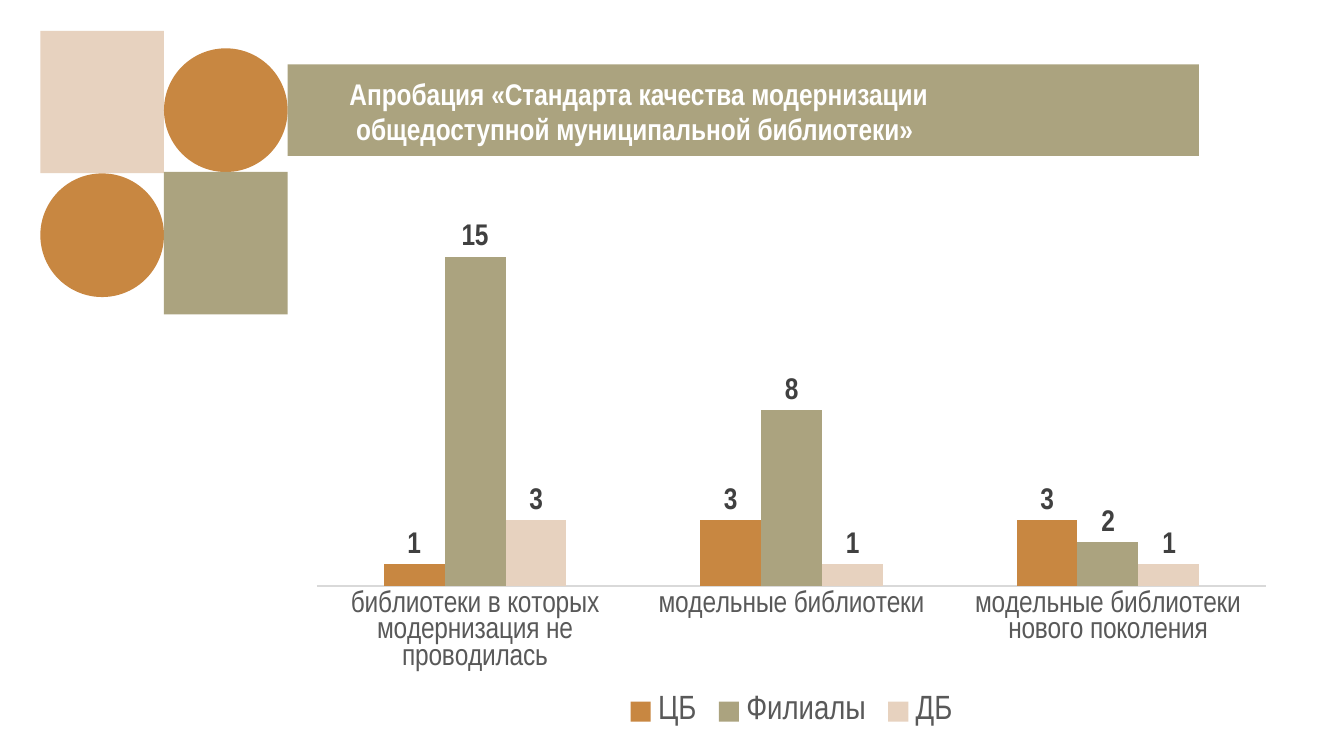
from dataclasses import dataclass

from lxml import etree
from pptx import Presentation
from pptx.chart.data import CategoryChartData
from pptx.dml.color import RGBColor
from pptx.enum.chart import XL_CHART_TYPE, XL_LABEL_POSITION, XL_LEGEND_POSITION, XL_TICK_MARK
from pptx.enum.shapes import MSO_SHAPE
from pptx.enum.text import MSO_ANCHOR, MSO_AUTO_SIZE, PP_ALIGN
from pptx.oxml.ns import qn
from pptx.util import Inches, Pt

RECTANGLE, OVAL = MSO_SHAPE.RECTANGLE, MSO_SHAPE.OVAL
COLUMNS = XL_CHART_TYPE.COLUMN_CLUSTERED
LABEL_ABOVE = XL_LABEL_POSITION.OUTSIDE_END
LEGEND_BELOW = XL_LEGEND_POSITION.BOTTOM
NO_TICKS = XL_TICK_MARK.NONE
LEFT, TOP = PP_ALIGN.LEFT, MSO_ANCHOR.TOP
KEEP_SIZE = MSO_AUTO_SIZE.NONE
TITLE_ONLY = 5


@dataclass(frozen=True)
class Theme:
    font: str = "Arial Narrow"
    orange: str = "C88741"
    olive: str = "ABA37F"
    sand: str = "E7D2BF"
    white: str = "FFFFFF"
    label: str = "404040"
    axis_text: str = "595959"
    axis_line: str = "D9D9D9"
    text_size: int = 16
    legend_size: int = 18


THEME = Theme()
SLIDE_WIDTH = 10
SLIDE_HEIGHT = SLIDE_WIDTH * 9 / 16

# Regions in inches: left, top, width, height
ORNAMENT_BOX = (0.3, 0.23, 1.84, 2.11)
BAND_BOX = (2.14, 0.48, 6.78, 0.68)
CHART_BOX = (2.21, 1.67, 7.36, 3.79)

TITLE_LINES = [
    "Апробация «Стандарта качества модернизации",
    " общедоступной муниципальной библиотеки»",
]
CATEGORIES = [
    "библиотеки в которых модернизация не проводилась",
    "модельные библиотеки",
    "модельные библиотеки нового поколения",
]
SERIES = [
    ("ЦБ", (1, 3, 3), THEME.orange),
    ("Филиалы", (15, 8, 2), THEME.olive),
    ("ДБ", (3, 1, 1), THEME.sand),
]
# Plot area as shares of the chart box
PLOT_LAYOUT = {"x": 0.02, "y": 0.02, "w": 0.96, "h": 0.69}


def format_font(font, size, color, bold=False):
    font.name = THEME.font
    font.size = Pt(size)
    font.bold = bold
    font.color.rgb = RGBColor.from_string(color)


def add_block(slide, kind, box, color):
    shape = slide.shapes.add_shape(kind, *map(Inches, box))
    shape.shadow.inherit = False
    shape.fill.solid()
    shape.fill.fore_color.rgb = RGBColor.from_string(color)
    shape.line.fill.background()


def add_ornament(slide, box):
    """Two by two grid of tiles and circles, each one column wide."""
    left, top, width, height = box
    column, tile = width / 2, 1.06
    middle = left + column
    tile_top = top + height - tile
    add_block(slide, RECTANGLE, (left, top, column, tile), THEME.sand)
    add_block(slide, OVAL, (left, top + tile, column, column), THEME.orange)
    add_block(slide, OVAL, (middle, tile_top - column, column, column), THEME.orange)
    add_block(slide, RECTANGLE, (middle, tile_top, column, tile), THEME.olive)


def add_title_band(slide, box):
    left, top, width, height = box
    add_block(slide, RECTANGLE, box, THEME.olive)

    # Title over the band, indented from its left edge
    title = slide.shapes.title
    indent, drop = 0.36, 0.03
    title.left, title.top = Inches(left + indent), Inches(top + drop)
    title.width, title.height = Inches(width - indent), Inches(height - drop)
    title.element.getparent().append(title.element)
    frame = title.text_frame
    frame.text = "\n".join(TITLE_LINES)
    frame.word_wrap = True
    frame.auto_size = KEEP_SIZE
    frame.vertical_anchor = TOP
    for paragraph in frame.paragraphs:
        paragraph.alignment = LEFT
        for run in paragraph.runs:
            format_font(run.font, THEME.text_size, THEME.white, bold=True)


def set_plot_layout(chart):
    plot_area = chart.element.find(".//" + qn("c:plotArea"))
    layout = plot_area.find(qn("c:layout"))
    if layout is None:
        layout = etree.Element(qn("c:layout"))
        plot_area.insert(0, layout)
    manual = etree.SubElement(layout, qn("c:manualLayout"))
    settings = {"layoutTarget": "inner", "xMode": "edge", "yMode": "edge", **PLOT_LAYOUT}
    for name, value in settings.items():
        etree.SubElement(manual, qn("c:" + name)).set("val", str(value))


def add_library_chart(slide, box):
    data = CategoryChartData()
    data.categories = CATEGORIES
    for name, values, _ in SERIES:
        data.add_series(name, values)
    chart = slide.shapes.add_chart(COLUMNS, *map(Inches, box), data).chart
    chart.has_title = False
    chart.font.name = THEME.font
    set_plot_layout(chart)

    # Columns and value labels
    plot = chart.plots[0]
    plot.gap_width = 219
    plot.overlap = 0
    plot.vary_by_categories = False
    for series, (_, _, color) in zip(plot.series, SERIES):
        series.format.fill.solid()
        series.format.fill.fore_color.rgb = RGBColor.from_string(color)
        labels = series.data_labels
        labels.show_value = True
        labels.position = LABEL_ABOVE
        format_font(labels.font, THEME.text_size, THEME.label, bold=True)

    # Axes
    value_axis = chart.value_axis
    value_axis.visible = False
    value_axis.has_major_gridlines = False
    value_axis.minimum_scale, value_axis.maximum_scale = 0, 16
    category_axis = chart.category_axis
    category_axis.major_tick_mark = NO_TICKS
    category_axis.format.line.color.rgb = RGBColor.from_string(THEME.axis_line)
    category_axis.format.line.width = Pt(0.75)
    format_font(category_axis.tick_labels.font, THEME.text_size, THEME.axis_text)

    # Legend
    chart.has_legend = True
    chart.legend.position = LEGEND_BELOW
    chart.legend.include_in_layout = False
    format_font(chart.legend.font, THEME.legend_size, THEME.axis_text)


def main():
    presentation = Presentation()
    presentation.slide_width = Inches(SLIDE_WIDTH)
    presentation.slide_height = Inches(SLIDE_HEIGHT)
    slide = presentation.slides.add_slide(presentation.slide_layouts[TITLE_ONLY])
    add_ornament(slide, ORNAMENT_BOX)
    add_title_band(slide, BAND_BOX)
    add_library_chart(slide, CHART_BOX)
    presentation.save("out.pptx")


if __name__ == "__main__":
    main()
